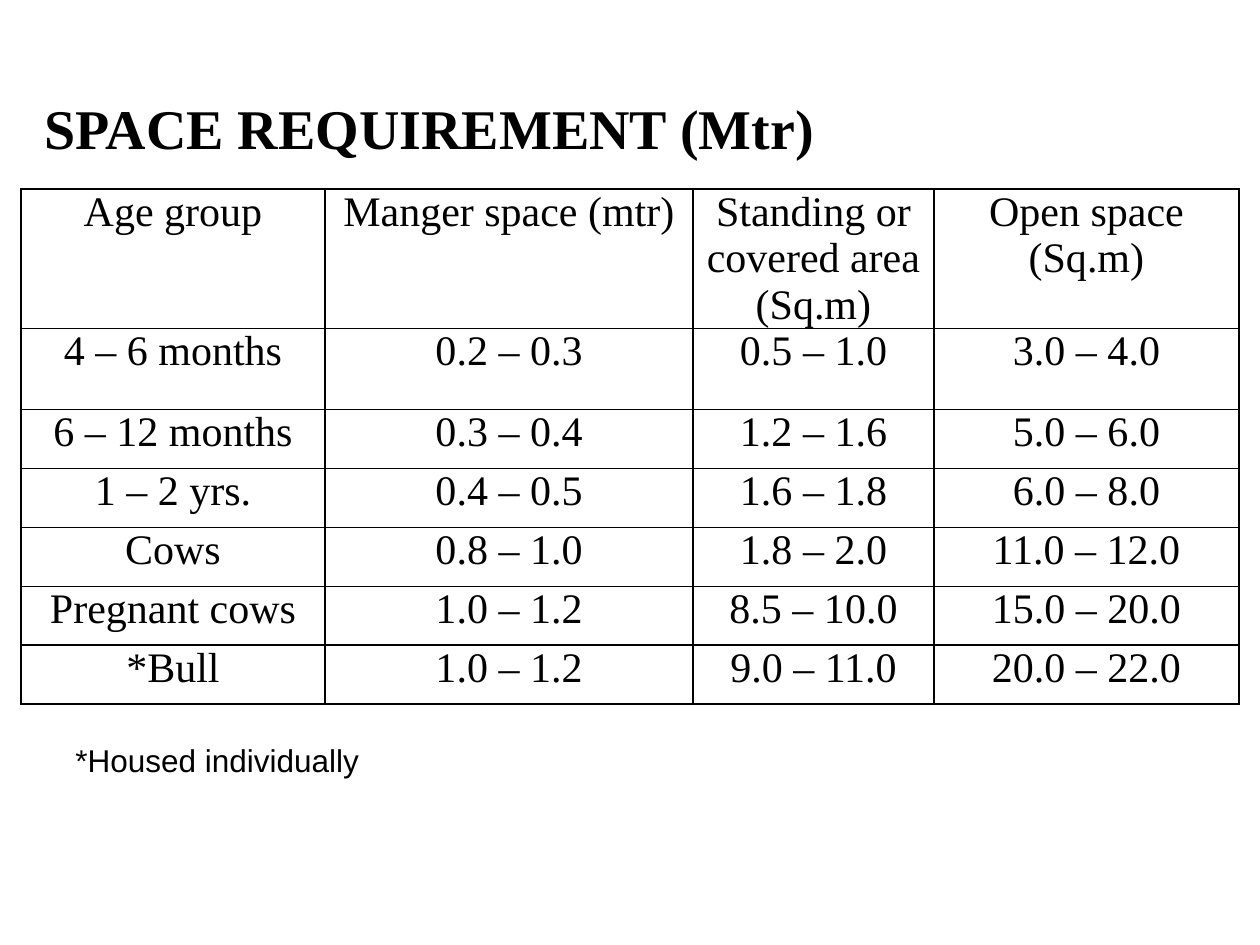
from lxml.etree import SubElement
from pptx import Presentation
from pptx.dml.color import RGBColor
from pptx.enum.text import MSO_ANCHOR, PP_ALIGN
from pptx.oxml.ns import qn
from pptx.util import Pt

EMU_PER_PX = 914400 / 126
BLACK = "000000"
SERIF = "Times New Roman"
COLUMN_WIDTHS = [304, 368, 241, 305]
ROW_HEIGHTS = [139, 81] + [59] * 5
REQUIREMENTS = [
    ["Age group", "Manger space (mtr)", "Standing or covered area (Sq.m)", "Open space (Sq.m)"],
    ["4 – 6 months", "0.2 – 0.3", "0.5 – 1.0", "3.0 – 4.0"],
    ["6 – 12 months", "0.3 – 0.4", "1.2 – 1.6", "5.0 – 6.0"],
    ["1 – 2 yrs.", "0.4 – 0.5", "1.6 – 1.8", "6.0 – 8.0"],
    ["Cows", "0.8 – 1.0", "1.8 – 2.0", "11.0 – 12.0"],
    ["Pregnant cows", "1.0 – 1.2", "8.5 – 10.0", "15.0 – 20.0"],
    ["*Bull", "1.0 – 1.2", "9.0 – 11.0", "20.0 – 22.0"],
]


def px(length):
    return round(length * EMU_PER_PX)


def color(value):
    return RGBColor.from_string(value)


def format_text(frame, font, size, bold=False, align=PP_ALIGN.LEFT):
    for para in frame.paragraphs:
        para.alignment = align
        for span in para.runs:
            span.font.name = font
            span.font.size = Pt(size)
            span.font.bold = bold
            span.font.color.rgb = color(BLACK)


def add_text(page, box, text, font, size, bold=False, top_inset=6):
    frame = page.shapes.add_textbox(*map(px, box)).text_frame
    frame.word_wrap = True
    frame.vertical_anchor = MSO_ANCHOR.TOP
    frame.margin_top = px(top_inset)
    frame.text = text
    format_text(frame, font, size, bold)


def add_borders(cell):
    properties = cell._tc.get_or_add_tcPr()
    for position, side in enumerate(["a:lnL", "a:lnR", "a:lnT", "a:lnB"]):
        line = properties.makeelement(qn(side), {"w": str(Pt(1))})
        fill = SubElement(line, qn("a:solidFill"))
        SubElement(fill, qn("a:srgbClr"), val=BLACK)
        properties.insert(position, line)


def fill_cell(cell, text):
    cell.text = text
    cell.margin_left = cell.margin_right = px(9)
    cell.margin_top = cell.margin_bottom = 0
    cell.fill.background()
    format_text(cell.text_frame, SERIF, 24, align=PP_ALIGN.CENTER)
    add_borders(cell)


def add_requirements(page, left, top):
    box = left, top, sum(COLUMN_WIDTHS), sum(ROW_HEIGHTS)
    table = page.shapes.add_table(len(ROW_HEIGHTS), len(COLUMN_WIDTHS), *map(px, box)).table
    table.first_row = table.horz_banding = False
    for column, width in zip(table.columns, COLUMN_WIDTHS):
        column.width = px(width)
    for row, height, texts in zip(table.rows, ROW_HEIGHTS, REQUIREMENTS):
        row.height = px(height)
        for cell, text in zip(row.cells, texts):
            fill_cell(cell, text)


def main():
    deck = Presentation()
    deck.slide_width, deck.slide_height = px(1260), px(945)
    page = deck.slides.add_slide(deck.slide_layouts[6])
    add_requirements(page, 21, 189)
    add_text(page, (32, 84, 1197, 149), "SPACE REQUIREMENT (Mtr)", SERIF, 32, True, 10)
    add_text(page, (63, 735, 483, 50), "*Housed individually", "Arial", 18)
    deck.save("out.pptx")


if __name__ == "__main__":
    main()
